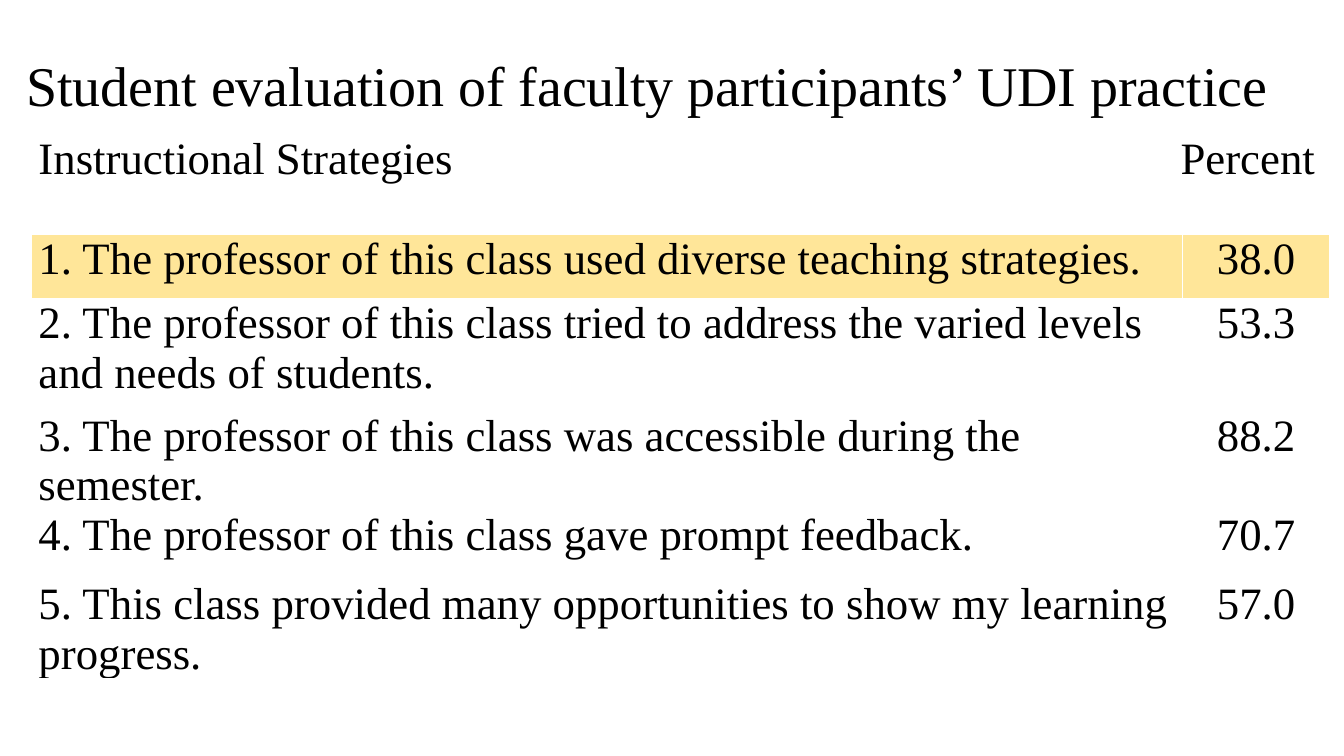
import pptx
import pptx.util
import pptx.dml.color
import pptx.enum.text
import lxml.etree
from pptx.util import Cm, Pt

COLORS = {"text": "000000", "plain": "FFFFFF", "highlight": "FFE699"}
FONT = "Times New Roman"
STRATEGIES = [
    ("1. The professor of this class used diverse teaching strategies.", "38.0"),
    ("2. The professor of this class tried to address the varied levels and needs of students.", "53.3"),
    ("3. The professor of this class was accessible during the semester.", "88.2"),
    ("4. The professor of this class gave prompt feedback.", "70.7"),
    ("5. This class provided many opportunities to show my learning progress.", "57.0"),
]
COLUMN_WIDTHS = [29.01, 3.71]
ROW_HEIGHTS = [2.51, 1.61, 2.84, 2.51, 1.73, 2.34]


def style_font(paragraph, size):
    paragraph.font.name = FONT
    paragraph.font.size = Pt(size)
    paragraph.font.color.rgb = pptx.dml.color.RGBColor.from_string(COLORS["text"])


def fill_cell(cell, text, color, alignment):
    cell.fill.solid()
    cell.fill.fore_color.rgb = pptx.dml.color.RGBColor.from_string(COLORS[color])
    cell.margin_left = cell.margin_right = Cm(0.18)
    cell.margin_top = cell.margin_bottom = 0
    cell.vertical_anchor = pptx.enum.text.MSO_ANCHOR.TOP
    paragraph = cell.text_frame.paragraphs[0]
    paragraph.text = text
    paragraph.alignment = alignment
    paragraph.space_before = paragraph.space_after = Pt(3)
    style_font(paragraph, 32)
    return paragraph


presentation = pptx.Presentation()
presentation.slide_width = Cm(33.87)
presentation.slide_height = Cm(19.05)
slide = presentation.slides.add_slide(presentation.slide_layouts[5])

title = slide.shapes.title
title.left, title.top, title.width, title.height = Cm(0.41), Cm(1.02), Cm(33.45), Cm(2.39)
title.text_frame.text = "Student evaluation of faculty participants’ UDI practice"
title.text_frame.vertical_anchor = pptx.enum.text.MSO_ANCHOR.MIDDLE
heading = title.text_frame.paragraphs[0]
heading.alignment = pptx.enum.text.PP_ALIGN.LEFT
heading.line_spacing = 0.9
style_font(heading, 40)

evaluation = slide.shapes.add_table(
    len(ROW_HEIGHTS), len(COLUMN_WIDTHS),
    Cm(0.79), Cm(3.4), Cm(sum(COLUMN_WIDTHS)), Cm(sum(ROW_HEIGHTS)),
).table
evaluation.first_row = False
evaluation.horz_banding = False
for column, width in zip(evaluation.columns, COLUMN_WIDTHS):
    column.width = Cm(width)
for row, height in zip(evaluation.rows, ROW_HEIGHTS):
    row.height = Cm(height)

left = pptx.enum.text.PP_ALIGN.LEFT
center = pptx.enum.text.PP_ALIGN.CENTER
evaluation.cell(0, 0).merge(evaluation.cell(0, 1))
header = fill_cell(evaluation.cell(0, 0), "Instructional Strategies\tPercent", "plain", left)
namespace = "{http://schemas.openxmlformats.org/drawingml/2006/main}"
tabs = lxml.etree.Element(namespace + "tabLst")
lxml.etree.SubElement(tabs, namespace + "tab", pos=str(Cm(28.78)), algn="l")
header.font._element.addprevious(tabs)

for number, (strategy, percent) in enumerate(STRATEGIES, 1):
    color = "highlight" if number == 1 else "plain"
    fill_cell(evaluation.cell(number, 0), strategy, color, left)
    fill_cell(evaluation.cell(number, 1), percent, color, center)

presentation.save("out.pptx")
